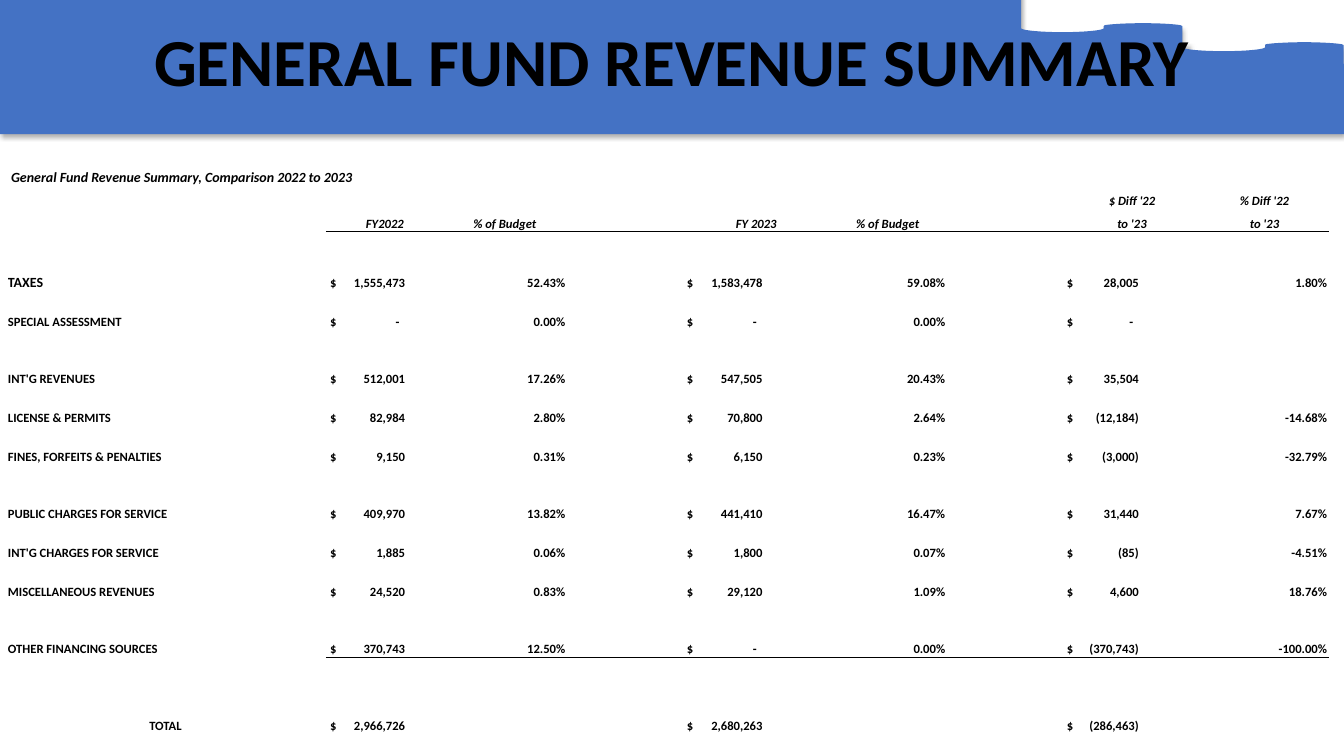
from lxml.etree import SubElement
from pptx import Presentation
from pptx.dml.color import RGBColor
from pptx.enum.text import MSO_ANCHOR, PP_ALIGN
from pptx.oxml.ns import qn
from pptx.util import Pt

BLUE = RGBColor(0x44, 0x72, 0xC4)
BLACK = RGBColor(0, 0, 0)
FONT = "Calibri"

deck = Presentation()
deck.slide_width, deck.slide_height = Pt(960), Pt(540)
slide = deck.slides.add_slide(deck.slide_layouts[6])


def curve(a, b, c, d, steps=12):
    """Points of a cubic curve from a to d, without a."""
    points = []
    for i in range(1, steps + 1):
        t = i / steps
        u = 1 - t
        points.append(tuple(u**3 * p + 3 * u * u * t * q + 3 * u * t * t * r + t**3 * s
                            for p, q, r, s in zip(a, b, c, d)))
    return points


def style(text, size, italic=False):
    """Format every run, and set the size of an empty paragraph."""
    for para in text.paragraphs:
        for run in para.runs:
            font = run.font
            font.name, font.size = FONT, Pt(size)
            font.bold, font.italic = True, italic
            font.color.rgb = BLACK
        if not para.runs:
            SubElement(para._p, qn("a:endParaRPr"), sz=str(size * 100))


# Banner with two equal waves along its upper right edge
edge = [(729.4, -10)]
for dx, dy in ((0, 0), (115.2, 13.6)):
    wave = [(729.4, 20.2)]
    wave += curve(wave[-1], (729.4, 21.6), (742.3, 23), (758.9, 23))
    wave += curve(wave[-1], (775.4, 23), (788.4, 21.6), (788.4, 20.2))
    wave += [(788.4, 18.7), (789.1, 18)]
    wave += curve(wave[-1], (793.4, 17.3), (804.2, 16.6), (816.5, 16.6))
    wave += curve(wave[-1], (828.7, 16.6), (838.8, 17.3), (843.1, 18))
    wave += [(844.6, 18.7)]
    edge += [(x + dx, y + dy) for x, y in wave]
edge += [(960, 95.8), (0, 95.8)]

pen = slide.shapes.build_freeform(Pt(0), Pt(-10), scale=1.0)
pen.add_line_segments([(Pt(x), Pt(y)) for x, y in edge], close=True)
banner = pen.convert_to_shape()
banner.fill.solid()
banner.fill.fore_color.rgb = BLUE
banner.line.fill.background()
banner.shadow.inherit = False
glow = SubElement(banner._element.spPr.find(qn("a:effectLst")), qn("a:outerShdw"),
                  blurRad=str(Pt(3.5)), dist=str(Pt(2.2)), dir="5400000",
                  algn="t", rotWithShape="0")
tint = SubElement(glow, qn("a:srgbClr"), val=str(BLACK))
SubElement(tint, qn("a:alpha"), val="32000")

title = banner.text_frame
title.text = "GENERAL FUND REVENUE SUMMARY"
title.word_wrap = True
title.vertical_anchor = MSO_ANCHOR.MIDDLE
title.paragraphs[0].alignment = PP_ALIGN.CENTER
style(title, 48)

# Table contents by row number: label, FY2022, share, FY 2023, share, change, change %
HEADS = {
    1: ["", "", "", "", "", "", "", "$ Diff '22", "% Diff '22"],
    2: ["", "FY2022", "% of Budget", "", "FY 2023", "% of Budget", "", "to '23", "to '23"],
}
FUNDS = {
    4: ("TAXES", "1,555,473", "52.43%", "1,583,478", "59.08%", "28,005", "1.80%"),
    6: ("SPECIAL ASSESSMENT", "-", "0.00%", "-", "0.00%", "-", ""),
    8: ("INT'G REVENUES", "512,001", "17.26%", "547,505", "20.43%", "35,504", ""),
    10: ("LICENSE & PERMITS", "82,984", "2.80%", "70,800", "2.64%", "(12,184)", "-14.68%"),
    12: ("FINES, FORFEITS & PENALTIES", "9,150", "0.31%", "6,150", "0.23%", "(3,000)", "-32.79%"),
    14: ("PUBLIC CHARGES FOR SERVICE", "409,970", "13.82%", "441,410", "16.47%", "31,440", "7.67%"),
    16: ("INT'G CHARGES FOR SERVICE", "1,885", "0.06%", "1,800", "0.07%", "(85)", "-4.51%"),
    18: ("MISCELLANEOUS REVENUES", "24,520", "0.83%", "29,120", "1.09%", "4,600", "18.76%"),
    20: ("OTHER FINANCING SOURCES", "370,743", "12.50%", "-", "0.00%", "(370,743)", "-100.00%"),
    23: ("TOTAL", "2,966,726", "", "2,680,263", "", "(286,463)", ""),
}
SLOTS = (0, 1, 2, 4, 5, 7, 8)
STOPS = {1: 55.5, 4: 56, 7: 53.5}
WIDTHS = (228.2, 83.5, 87.8, 83.5, 104.4, 83.5, 83.5, 98.6, 90.7)
TALL = {0: 29.5, 1: 15.8, 2: 16.6, 3: 15.8, 4: 26.6, 8: 26.6, 14: 26.6, 20: 26.6, 23: 26.6}
RULES = {2: "a:lnB", 3: "a:lnT", 20: "a:lnB", 21: "a:lnT"}

# Table grid
frame = slide.shapes.add_table(24, 9, Pt(5), Pt(103.7), Pt(sum(WIDTHS)), Pt(420.5))
table = frame.table
table.first_row = table.horz_banding = False
for col, width in zip(table.columns, WIDTHS):
    col.width = Pt(width)
for r, row in enumerate(table.rows):
    row.height = Pt(TALL.get(r, 14))

# Cell text
for r, heads in HEADS.items():
    for c, head in enumerate(heads):
        para = table.cell(r, c).text_frame.paragraphs[0]
        para.text = head
        para.alignment = PP_ALIGN.CENTER
for r, fund in FUNDS.items():
    for c, value in zip(SLOTS, fund):
        para = table.cell(r, c).text_frame.paragraphs[0]
        if c in STOPS:
            para.text = f" $\t{value}"
            stop = STOPS[c] - (4 if value == "-" else 0)
            tabs = SubElement(para._p.get_or_add_pPr(), qn("a:tabLst"))
            SubElement(tabs, qn("a:tab"), pos=str(Pt(stop)), algn="r")
        else:
            para.text = value
            para.alignment = PP_ALIGN.RIGHT if c else PP_ALIGN.LEFT
table.cell(23, 0).text_frame.paragraphs[0]._p.get_or_add_pPr().set("marL", str(Pt(101)))
table.cell(0, 0).text_frame.text = " General Fund Revenue Summary, Comparison 2022 to 2023"
table.cell(0, 0).merge(table.cell(0, 2))

# Cell format and rules
for r in range(24):
    for c in range(9):
        cell = table.cell(r, c)
        cell.margin_left = cell.margin_right = cell.margin_top = Pt(0.7)
        cell.margin_bottom = Pt(0)
        cell.vertical_anchor = MSO_ANCHOR.BOTTOM
        style(cell.text_frame, 10 if c == 0 and r in (0, 4) else 9, italic=r < 3)
        if r in RULES and c:
            line = SubElement(cell._tc.get_or_add_tcPr(), qn(RULES[r]), w=str(Pt(1)))
            SubElement(SubElement(line, qn("a:solidFill")), qn("a:srgbClr"), val=str(BLACK))
        cell.fill.background()

deck.save("out.pptx")
